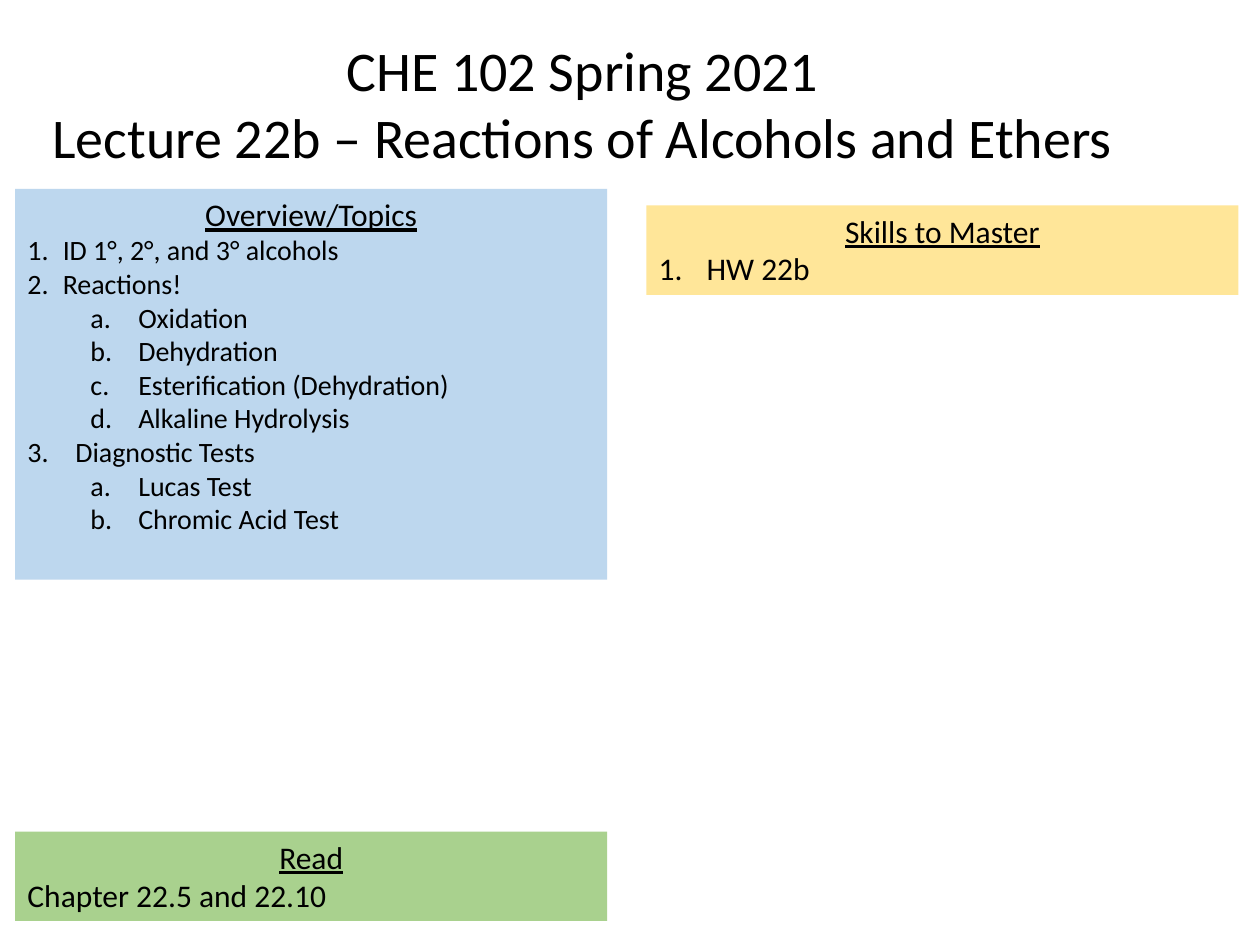
from pptx import Presentation
from pptx.dml.color import RGBColor
from pptx.enum.shapes import MSO_SHAPE as Shape
from pptx.enum.text import MSO_ANCHOR as Anchor, PP_ALIGN as Align
from pptx.oxml.xmlchemy import OxmlElement
from pptx.util import Inches, Pt

THEME = {
    "font": "Calibri", "text": "000000",
    "blue": "BDD7EE", "yellow": "FFE699", "green": "A9D18E",
    "title": 32, "heading": 18, "topic": 16,
}

# Content
TITLE = ["CHE 102 Spring 2021", "Lecture 22b – Reactions of Alcohols and Ethers"]

# List styles: level, text indent, hanging indent, numbering scheme
LISTS = {
    "topic": (0, 0.28, 0.28, "arabicPeriod"),
    "wide topic": (0, 0.38, 0.38, "arabicPeriod"),
    "subtopic": (1, 0.88, 0.38, "alphaLcPeriod"),
    "plain": None,
}
TOPICS = [
    ("ID 1°, 2°, and 3° alcohols", "topic"),
    ("Reactions!", "topic"),
    ("Oxidation", "subtopic"),
    ("Dehydration", "subtopic"),
    ("Esterification (Dehydration)", "subtopic"),
    ("Alkaline Hydrolysis", "subtopic"),
    ("Diagnostic Tests", "wide topic"),
    ("Lucas Test", "subtopic"),
    ("Chromic Acid Test", "subtopic"),
]

# Panels: heading, items, item size, fill, left, top, height
LEFT, RIGHT, PANEL_WIDTH, SHORT = 0.12, 5.13, 4.7, 0.71
PANELS = [
    ("Overview/Topics", TOPICS, "topic", "blue", LEFT, 1.5, 3.1),
    ("Skills to Master", [("HW 22b", "wide topic")], "heading", "yellow", RIGHT, 1.63, SHORT),
    ("Read", [("Chapter 22.5 and 22.10", "plain")], "heading", "green", LEFT, 6.6, SHORT),
]


def write(frame, text, size, align=Align.LEFT, underline=False, numbering=None):
    """Fill the first empty paragraph, or add one after the others."""
    paragraph = frame.paragraphs[-1]
    if paragraph.runs:
        paragraph = frame.add_paragraph()
    paragraph.alignment = align
    run = paragraph.add_run()
    run.text = text
    run.font.name = THEME["font"]
    run.font.size = Pt(THEME[size])
    run.font.underline = underline
    run.font.color.rgb = RGBColor.from_string(THEME["text"])
    if numbering:
        level, indent, hanging, scheme = numbering
        paragraph.level = level
        properties = paragraph._p.get_or_add_pPr()
        properties.set("marL", str(Inches(indent)))
        properties.set("indent", str(-Inches(hanging)))
        number = OxmlElement("a:buAutoNum")
        number.set("type", scheme)
        properties.append(number)


def add_panel(slide, heading, items, size, fill, left, top, height):
    shape = slide.shapes.add_shape(
        Shape.RECTANGLE, Inches(left), Inches(top), Inches(PANEL_WIDTH), Inches(height))
    shape.shadow.inherit = False
    shape.fill.solid()
    shape.fill.fore_color.rgb = RGBColor.from_string(THEME[fill])
    shape.line.fill.background()
    frame = shape.text_frame
    frame.word_wrap = True
    frame.vertical_anchor = Anchor.TOP
    write(frame, heading, "heading", align=Align.CENTER, underline=True)
    for text, style in items:
        write(frame, text, size, numbering=LISTS[style])


def main():
    presentation = Presentation()
    presentation.slide_width, presentation.slide_height = Inches(10), Inches(7.5)
    slide = presentation.slides.add_slide(presentation.slide_layouts[6])

    # Topic, skill and reading panels
    for panel in PANELS:
        add_panel(slide, *panel)

    # Title
    title = slide.shapes.add_textbox(Inches(0.27), Inches(0.23), Inches(8.71), Inches(1.18))
    title.text_frame.word_wrap = False
    for line in TITLE:
        write(title.text_frame, line, "title", align=Align.CENTER)

    presentation.save("out.pptx")


if __name__ == "__main__":
    main()
